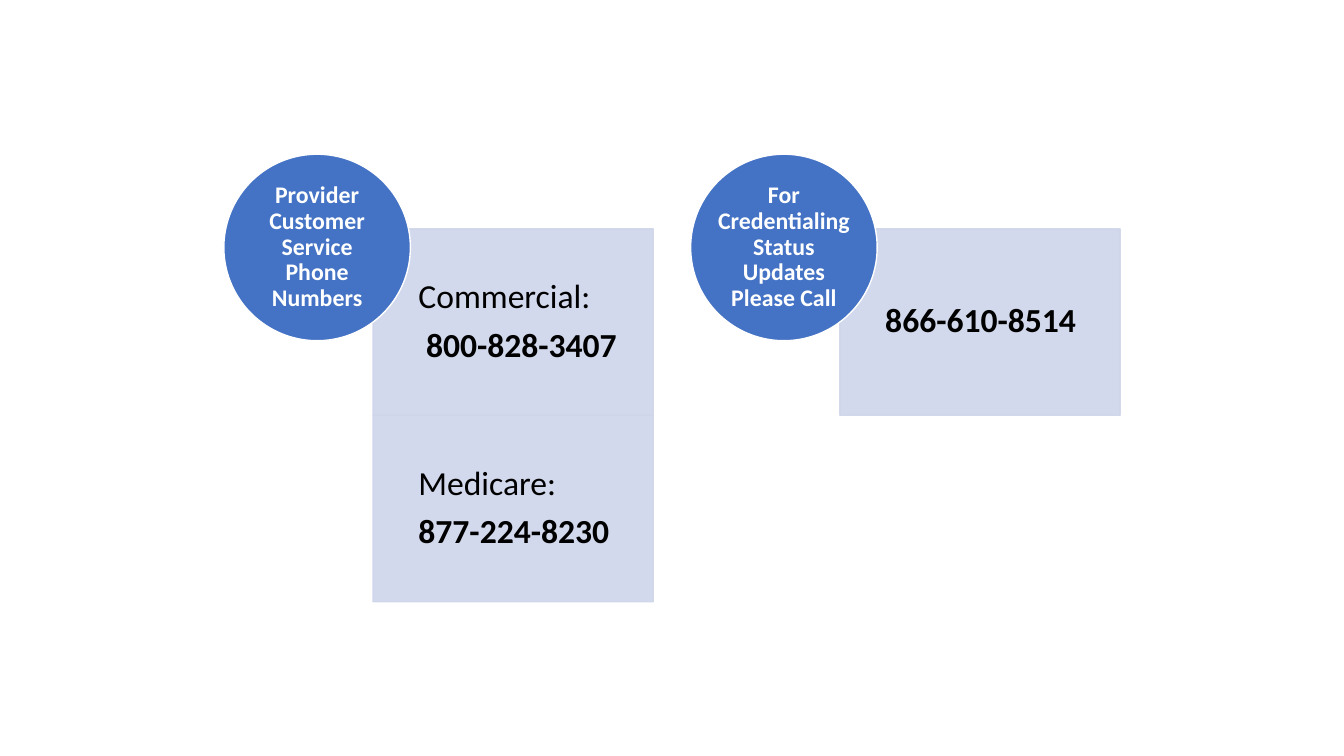
"""Build a slide of phone number cards, each headed by a circle."""
from dataclasses import dataclass

from lxml.etree import SubElement
from pptx import Presentation
from pptx.dml.color import RGBColor
from pptx.enum.shapes import MSO_SHAPE
from pptx.enum.text import MSO_ANCHOR, PP_ALIGN
from pptx.oxml.ns import qn
from pptx.shapes.autoshape import Shape
from pptx.slide import Slide
from pptx.util import Inches, Pt

COLORS = {"blue": "4472C4", "pale": "CFD5EA", "white": "FFFFFF", "black": "000000"}
SIDE = 1.85
WIDTH = 2.78
TOP = 1.53
SHIFT = 1.48
DROP = 0.74


@dataclass(frozen=True)
class Line:
    """One line of a card."""
    text: str
    bold: bool = False


@dataclass(frozen=True)
class Group:
    """A circle heading and the cards below it."""
    left: float
    head: str
    cards: tuple[tuple[Line, ...], ...]


GROUPS = (
    Group(2.22, "Provider Customer Service Phone Numbers", (
        (Line("Commercial:"), Line(" 800-828-3407", True)),
        (Line("Medicare:"), Line("877-224-8230", True)),
    )),
    Group(6.85, "For Credentialing Status Updates Please Call", (
        (Line("866-610-8514", True),),
    )),
)


def write(shape: Shape, lines: tuple[Line, ...], *, size: float, color: str,
          align: PP_ALIGN, pads: tuple[float, float, float, float]) -> None:
    """Fill a shape with formatted lines; pads run left, top, right, bottom."""
    frame = shape.text_frame
    frame.word_wrap = True
    frame.vertical_anchor = MSO_ANCHOR.MIDDLE
    frame.margin_left, frame.margin_top, frame.margin_right, frame.margin_bottom = map(Inches, pads)
    for index, line in enumerate(lines):
        para = frame.add_paragraph() if index else frame.paragraphs[0]
        para.alignment = align
        para.line_spacing = 0.9
        para.space_after = Pt(0.35 * size)
        run = para.add_run()
        run.text = line.text
        run.font.name = "Calibri"
        run.font.size = Pt(size)
        run.font.bold = line.bold
        run.font.color.rgb = RGBColor.from_string(COLORS[color])


def draw(slide: Slide, kind: MSO_SHAPE, left: float, top: float, width: float,
         fill: str, edge: str, alpha: int = 100) -> Shape:
    """Add a filled shape with a thin edge."""
    shape = slide.shapes.add_shape(kind, Inches(left), Inches(top), Inches(width), Inches(SIDE))
    shape.shadow.inherit = False
    shape.fill.solid()
    shape.fill.fore_color.rgb = RGBColor.from_string(COLORS[fill])
    shape.line.color.rgb = RGBColor.from_string(COLORS[edge])
    shape.line.width = Pt(1)
    if alpha < 100:
        for tint in shape.element.spPr.iter(qn("a:srgbClr")):
            SubElement(tint, qn("a:alpha")).set("val", str(alpha * 1000))
    return shape


def place(slide: Slide, group: Group) -> None:
    """Draw the cards of a group, then its circle on top."""
    for row, lines in enumerate(group.cards):
        card = draw(slide, MSO_SHAPE.RECTANGLE, group.left + SHIFT,
                    TOP + DROP + row * SIDE, WIDTH, "pale", "pale", 90)
        write(card, lines, size=24, color="black", align=PP_ALIGN.LEFT,
              pads=(0.45, 0.19, 0.19, 0.19))
    disc = draw(slide, MSO_SHAPE.OVAL, group.left, TOP, SIDE, "blue", "white")
    write(disc, (Line(group.head, True),), size=17, color="white",
          align=PP_ALIGN.CENTER, pads=(0, 0, 0, 0))


def main() -> None:
    """Build and save the slide."""
    deck = Presentation()
    deck.slide_width, deck.slide_height = Inches(13.33), Inches(7.5)
    slide = deck.slides.add_slide(deck.slide_layouts[6])
    for group in GROUPS:
        place(slide, group)
    deck.save("out.pptx")


if __name__ == "__main__":
    main()
